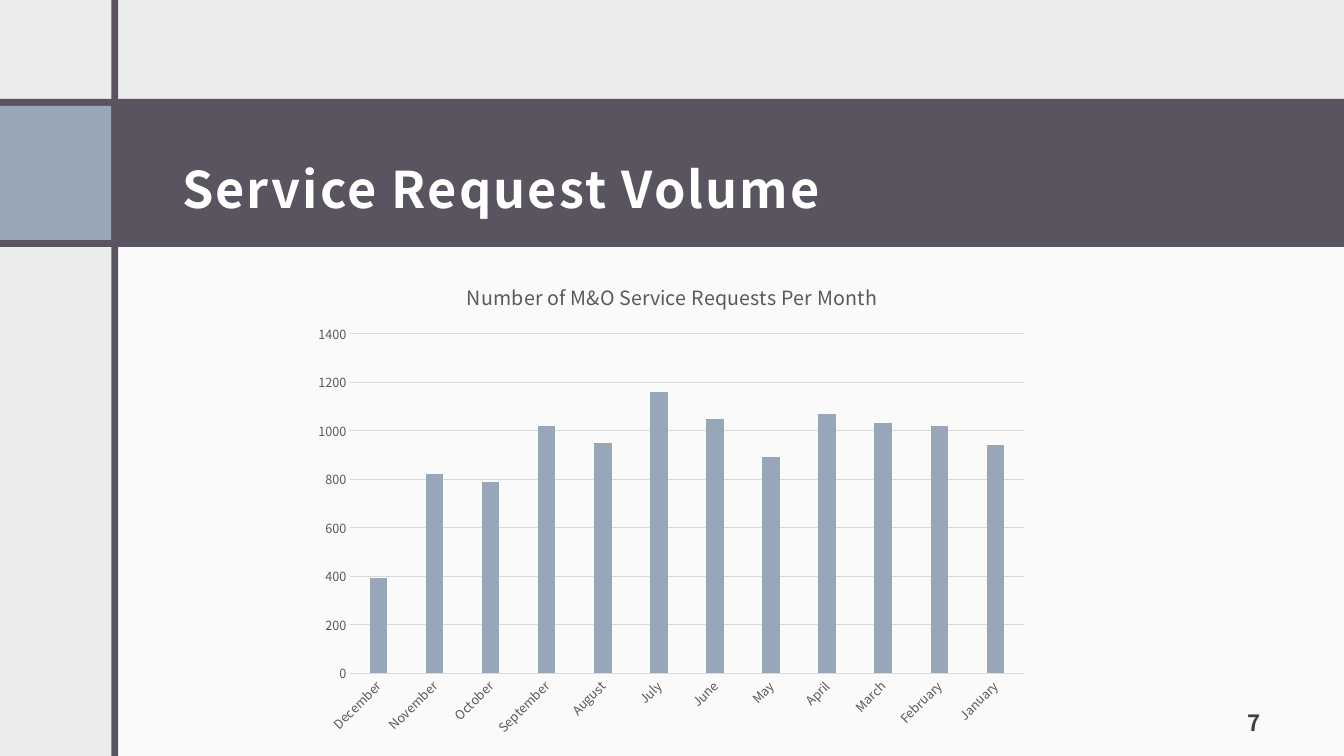
from lxml import etree
from pptx import Presentation
from pptx.chart.data import CategoryChartData as ChartData
from pptx.dml.color import RGBColor as Rgb
from pptx.enum.chart import XL_CHART_TYPE as Chart, XL_TICK_MARK as Tick
from pptx.enum.shapes import MSO_SHAPE as Shape
from pptx.enum.text import MSO_ANCHOR as Anchor, PP_ALIGN as Align
from pptx.oxml.ns import qn
from pptx.util import Pt

WIDE, HIGH = 960, 540
FACE = "Noto Sans CJK JP"
HUES = {
    "back": "EBEDEB", "panel": "FAFAFA", "band": "595460", "tile": "97A7B8",
    "white": "FFFFFF", "page": "404040", "label": "595959", "grid": "D9D9D9",
}
COUNTS = {
    "December": 390, "November": 820, "October": 790, "September": 1020,
    "August": 950, "July": 1160, "June": 1050, "May": 890,
    "April": 1070, "March": 1030, "February": 1020, "January": 940,
}


def hue(name):
    return Rgb.from_string(HUES[name])


def style(font, size, color, bold=False):
    font.name, font.size, font.bold = FACE, Pt(size), bold
    font.color.rgb = hue(color)


def add_block(slide, box, color):
    block = slide.shapes.add_shape(Shape.RECTANGLE, *map(Pt, box))
    block.shadow.inherit = False
    block.fill.solid()
    block.fill.fore_color.rgb = hue(color)
    block.line.fill.background()


def add_text(slide, box, text, size, color, anchor, align=Align.LEFT, lead=1.0):
    frame = slide.shapes.add_textbox(*map(Pt, box)).text_frame
    frame.word_wrap = True
    frame.vertical_anchor = anchor
    frame.margin_left = frame.margin_top = frame.margin_right = Pt(9)
    frame.margin_bottom = Pt(7.2)
    para = frame.paragraphs[0]
    para.alignment, para.line_spacing = align, lead
    style(para.font, size, color, True)
    run = para.add_run()
    run.text = text
    run._r.get_or_add_rPr().set("spc", "150")


def add_frame(slide, box):
    """Panel, title band, side tile and upright bar."""
    left, top, width, height = box
    bar, edge = 79.5, 5
    band, tall = top + 70.6, 105.8
    low = band + tall
    add_block(slide, (left + bar, low, width - bar, top + height - low), "panel")
    add_block(slide, (left, band, width, tall), "band")
    add_block(slide, (left, band + edge, bar, tall - 2 * edge), "tile")
    add_block(slide, (left + bar, top, edge, height), "band")


def set_layout(plot, x, y, w, h):
    """Fix the inner plot area, in shares of the chart."""
    area = plot._element.getparent()
    for old in area.findall(qn("c:layout")):
        area.remove(old)
    layout = etree.Element(qn("c:layout"))
    area.insert(0, layout)
    manual = etree.SubElement(layout, qn("c:manualLayout"))
    parts = {"layoutTarget": "inner", "xMode": "edge", "yMode": "edge",
             "x": x, "y": y, "w": w, "h": h}
    for tag, val in parts.items():
        etree.SubElement(manual, qn("c:" + tag)).set("val", str(val))


def add_graph(slide, box):
    """Column chart of monthly requests."""
    data = ChartData()
    data.categories = list(COUNTS)
    data.add_series("Series 1", list(COUNTS.values()))
    chart = slide.shapes.add_chart(
        Chart.COLUMN_CLUSTERED, *map(Pt, box), data).chart
    chart.has_legend = False
    style(chart.font, 10, "label")

    # Title
    chart.has_title = True
    head = chart.chart_title.text_frame
    head.text = "Number of M&O Service Requests Per Month"
    style(head.paragraphs[0].font, 14, "label")
    chart.chart_title.include_in_layout = False

    # Columns
    plot = chart.plots[0]
    plot.vary_by_categories = False
    plot.gap_width, plot.overlap = 219, -27
    fill = plot.series[0].format.fill
    fill.solid()
    fill.fore_color.rgb = hue("tile")
    set_layout(plot, 0.06, 0.15, 0.92, 0.7)

    # Axes
    months, scale = chart.category_axis, chart.value_axis
    for axis in (months, scale):
        axis.major_tick_mark = axis.minor_tick_mark = Tick.NONE
        style(axis.tick_labels.font, 9, "label")
    months._element.find(qn("c:txPr")).find(qn("a:bodyPr")).set("rot", "-2700000")
    scale.minimum_scale, scale.maximum_scale, scale.major_unit = 0, 1400, 200
    scale.format.line.fill.background()
    scale.has_major_gridlines = True
    for line in (months.format.line, scale.major_gridlines.format.line):
        line.color.rgb = hue("grid")
        line.width = Pt(0.75)


def main():
    deck = Presentation()
    deck.slide_width, deck.slide_height = Pt(WIDE), Pt(HIGH)
    slide = deck.slides.add_slide(deck.slide_layouts[6])
    slide.background.fill.solid()
    slide.background.fill.fore_color.rgb = hue("back")
    add_frame(slide, (0, 0, WIDE, HIGH))
    add_text(slide, (121, 82, 788.4, 81.4), "Service Request Volume",
             36, "white", Anchor.MIDDLE, lead=1.5)
    add_text(slide, (832.3, 496.8, 77, 36), "7",
             16, "page", Anchor.BOTTOM, Align.RIGHT)
    add_graph(slide, (218.9, 186.5, 522.7, 346.3))
    deck.save("out.pptx")


if __name__ == "__main__":
    main()
